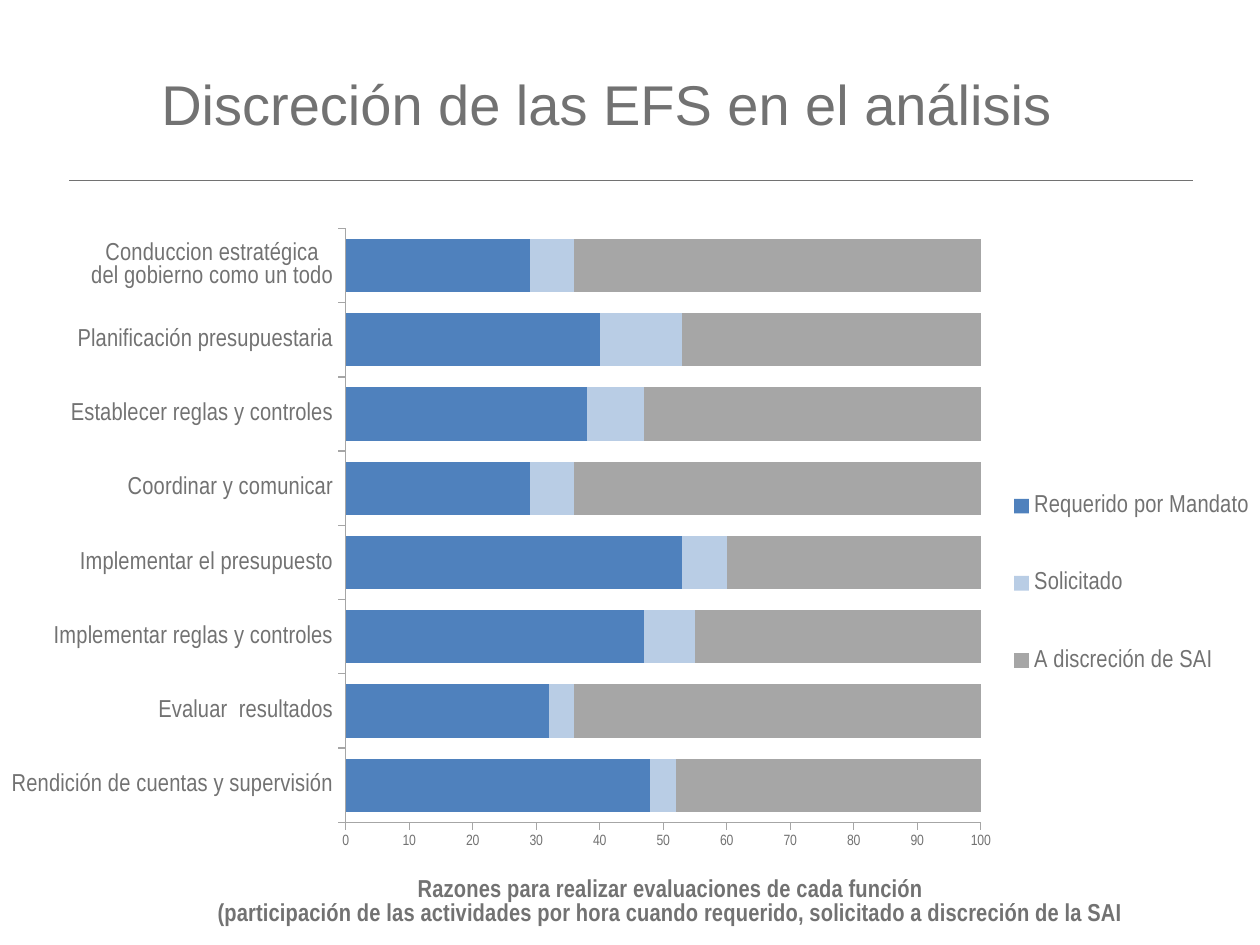
from lxml import etree
from pptx import Presentation
from pptx.chart.data import CategoryChartData
from pptx.dml.color import RGBColor
from pptx.enum.chart import XL_CHART_TYPE, XL_LEGEND_POSITION, XL_TICK_MARK
from pptx.enum.shapes import MSO_CONNECTOR
from pptx.enum.text import MSO_ANCHOR, PP_ALIGN
from pptx.oxml.ns import qn
from pptx.util import Inches, Pt

BAR_STACKED = XL_CHART_TYPE.BAR_STACKED
LEGEND_RIGHT = XL_LEGEND_POSITION.RIGHT
TICK_OUTSIDE = XL_TICK_MARK.OUTSIDE
STRAIGHT = MSO_CONNECTOR.STRAIGHT
MIDDLE = MSO_ANCHOR.MIDDLE
LEFT = PP_ALIGN.LEFT

TEXT_GRAY = RGBColor(0x72, 0x72, 0x72)
MANDATE_BLUE = RGBColor(0x4F, 0x81, 0xBD)
REQUEST_BLUE = RGBColor(0xB9, 0xCD, 0xE5)
DISCRETION_GRAY = RGBColor(0xA6, 0xA6, 0xA6)

FUNCTIONS = [
    "Rendición de cuentas y supervisión",
    "Evaluar  resultados",
    "Implementar reglas y controles",
    "Implementar el presupuesto",
    "Coordinar y comunicar",
    "Establecer reglas y controles",
    "Planificación presupuestaria",
    "Conduccion estratégica\ndel gobierno como un todo",
]
REASONS = [
    ("Requerido por Mandato", [48, 32, 47, 53, 29, 38, 40, 29], MANDATE_BLUE),
    ("Solicitado", [4, 4, 8, 7, 7, 9, 13, 7], REQUEST_BLUE),
    ("A discreción de SAI", [49, 64, 45, 40, 64, 54, 47, 64], DISCRETION_GRAY),
]
AXIS_CAPTION = [
    "Razones para realizar evaluaciones de cada función",
    "(participación de las actividades por hora cuando requerido, "
    "solicitado a discreción de la SAI",
]


def style_font(font, size, name="Arial Narrow", bold=False):
    font.size = Pt(size)
    font.name = name
    font.bold = bold
    font.color.rgb = TEXT_GRAY


def set_layout(parent, index, inner=False, **fractions):
    layout = parent.find(qn("c:layout"))
    if layout is None:
        layout = etree.Element(qn("c:layout"))
        parent.insert(index, layout)
    manual = etree.SubElement(layout, qn("c:manualLayout"))
    settings = {"layoutTarget": "inner"} if inner else {}
    settings.update(xMode="edge", yMode="edge", **fractions)
    for tag, value in settings.items():
        etree.SubElement(manual, qn("c:" + tag)).set("val", str(value))


def add_title(slide, left, top, width, height):
    title = slide.shapes.title
    title.left, title.top, title.width, title.height = left, top, width, height
    frame = title.text_frame
    frame.text = "Discreción de las EFS en el análisis"
    frame.vertical_anchor = MIDDLE
    frame.paragraphs[0].alignment = LEFT
    style_font(frame.paragraphs[0].runs[0].font, 32, "Arial")
    slide.shapes._spTree.append(title._element)


def add_rule(slide, left, top, width):
    rule = slide.shapes.add_connector(STRAIGHT, left, top, left + width, top)
    rule.line.color.rgb = TEXT_GRAY
    rule.line.width = Pt(0.5)
    etree.SubElement(rule._element.spPr, qn("a:effectLst"))


def format_axes(chart):
    function_axis, share_axis = chart.category_axis, chart.value_axis
    for axis, size in ((function_axis, 14), (share_axis, 8.5)):
        axis.has_major_gridlines = False
        axis.major_tick_mark = TICK_OUTSIDE
        axis.format.line.color.rgb = DISCRETION_GRAY
        style_font(axis.tick_labels.font, size)
    share_axis.minimum_scale = 0
    share_axis.maximum_scale = 100
    share_axis.major_unit = 10
    caption = share_axis.axis_title
    caption.text_frame.text = "\n".join(AXIS_CAPTION)
    for paragraph in caption.text_frame.paragraphs:
        style_font(paragraph.runs[0].font, 14, bold=True)
    set_layout(caption._element, 1, x=0.17, y=0.9)


def add_reasons_chart(slide, left, top, width, height):
    data = CategoryChartData()
    data.categories = FUNCTIONS
    for reason, shares, _ in REASONS:
        data.add_series(reason, shares)
    chart = slide.shapes.add_chart(
        BAR_STACKED, left, top, width, height, data
    ).chart
    chart.has_title = False
    style_font(chart.font, 8.5)

    plot = chart.plots[0]
    plot.gap_width = 39
    plot.overlap = 100
    plot.vary_by_categories = False
    for series, (_, _, color) in zip(plot.series, REASONS):
        series.format.fill.solid()
        series.format.fill.fore_color.rgb = color
    plot_area = chart._chartSpace.chart.plotArea
    set_layout(plot_area, 0, inner=True, x=0.275, y=0.199, w=0.505, h=0.646)

    format_axes(chart)
    chart.has_legend = True
    legend = chart.legend
    legend.position = LEGEND_RIGHT
    legend.include_in_layout = False
    style_font(legend.font, 14)
    set_layout(legend._element, 1, x=0.8, y=0.43, w=0.2, h=0.31)


def main():
    presentation = Presentation()
    presentation.slide_width = Inches(10)
    presentation.slide_height = Inches(7.5)
    slide = presentation.slides.add_slide(presentation.slide_layouts[5])
    add_rule(slide, Inches(0.55), Inches(1.43), Inches(8.92))
    add_reasons_chart(slide, Inches(0), Inches(0.36), Inches(9.98), Inches(7.3))
    add_title(slide, Inches(1.18), Inches(0.26), Inches(8.11), Inches(1.12))
    presentation.save("out.pptx")


if __name__ == "__main__":
    main()
